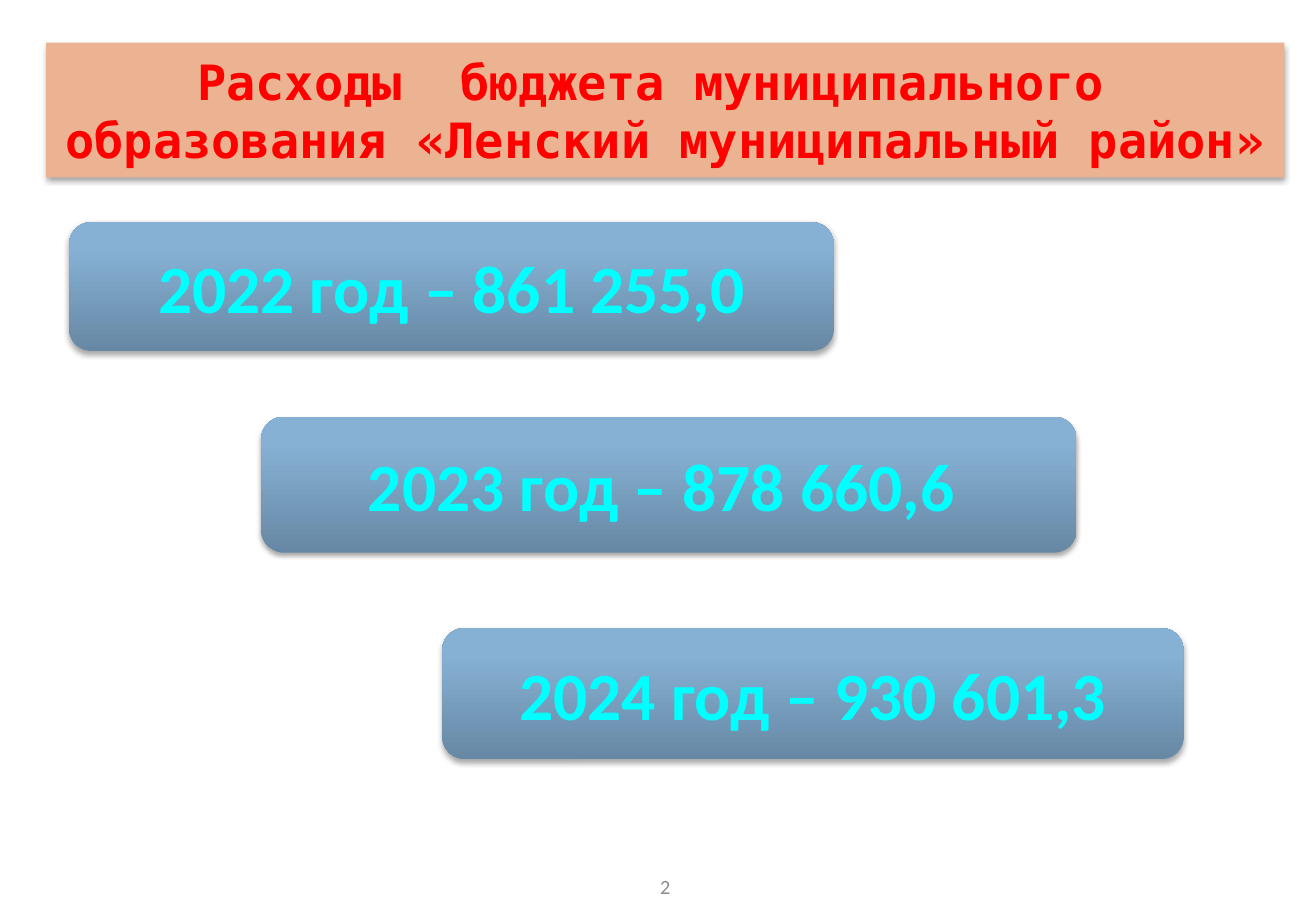
from lxml import etree
from pptx import Presentation
from pptx.dml.color import RGBColor
from pptx.enum.shapes import MSO_SHAPE as Shape
from pptx.enum.text import MSO_ANCHOR as Anchor, PP_ALIGN as Align
from pptx.util import Inches, Pt

NS = "http://schemas.openxmlformats.org/drawingml/2006/main"
SHADOW = (
    f'<a:outerShdw xmlns:a="{NS}" blurRad="40000" dist="23000" dir="5400000" '
    'rotWithShape="0"><a:srgbClr val="000000"><a:alpha val="35000"/>'
    "</a:srgbClr></a:outerShdw>"
)


def paint(target, color):
    target.rgb = RGBColor.from_string(color)


def write(shape, text, font, size, color, bold=False, wrap=True):
    frame = shape.text_frame
    frame.word_wrap = wrap
    frame.vertical_anchor = Anchor.MIDDLE
    para = frame.paragraphs[0]
    para.text = text
    para.alignment = Align.CENTER
    para.font.name = font
    para.font.size = Pt(size)
    para.font.bold = bold
    paint(para.font.color, color)


deck = Presentation()
deck.slide_width = Inches(10.83)
deck.slide_height = Inches(7.5)
slide = deck.slides.add_slide(deck.slide_layouts[6])
shapes = slide.shapes

# Title banner
title = shapes.add_shape(
    Shape.RECTANGLE, Inches(0.38), Inches(0.35), Inches(10.19), Inches(1.11))
title.fill.solid()
paint(title.fill.fore_color, "EBB391")
write(title, "Расходы  бюджета муниципального  образования "
      "«Ленский муниципальный район»",
      "DejaVu Sans Mono", 28.8, "FF0000", bold=True)

# Spending by year, stepping down to the right
years = [
    ("2022 год – 861 255,0", 0.57, 1.83, 6.29, 1.06),
    ("2023 год – 878 660,6 ", 2.15, 3.43, 6.71, 1.12),
    ("2024 год – 930 601,3", 3.64, 5.17, 6.1, 1.08),
]
cards = []
for text, *place in years:
    card = shapes.add_shape(Shape.ROUNDED_RECTANGLE, *map(Inches, place))
    card.fill.gradient()
    card.fill.gradient_angle = 90
    low, high = card.fill.gradient_stops
    low.position, high.position = 0, 0.8
    paint(low.color, "6788A4")
    paint(high.color, "86B1D4")
    write(card, text, "Calibri", 40, "00FFFF", bold=True, wrap=False)
    cards.append(card)

# Soft shadow and no outline on every panel
for panel in [title, *cards]:
    panel.line.fill.background()
    panel.shadow.inherit = False
    effects = panel.element.spPr.find(f"{{{NS}}}effectLst")
    effects.append(etree.fromstring(SHADOW))

# Page number
page = shapes.add_textbox(
    Inches(3.76), Inches(7.1), Inches(3.43), Inches(0.4))
write(page, "2", "Calibri", 12, "8C8C8C")

deck.save("out.pptx")
